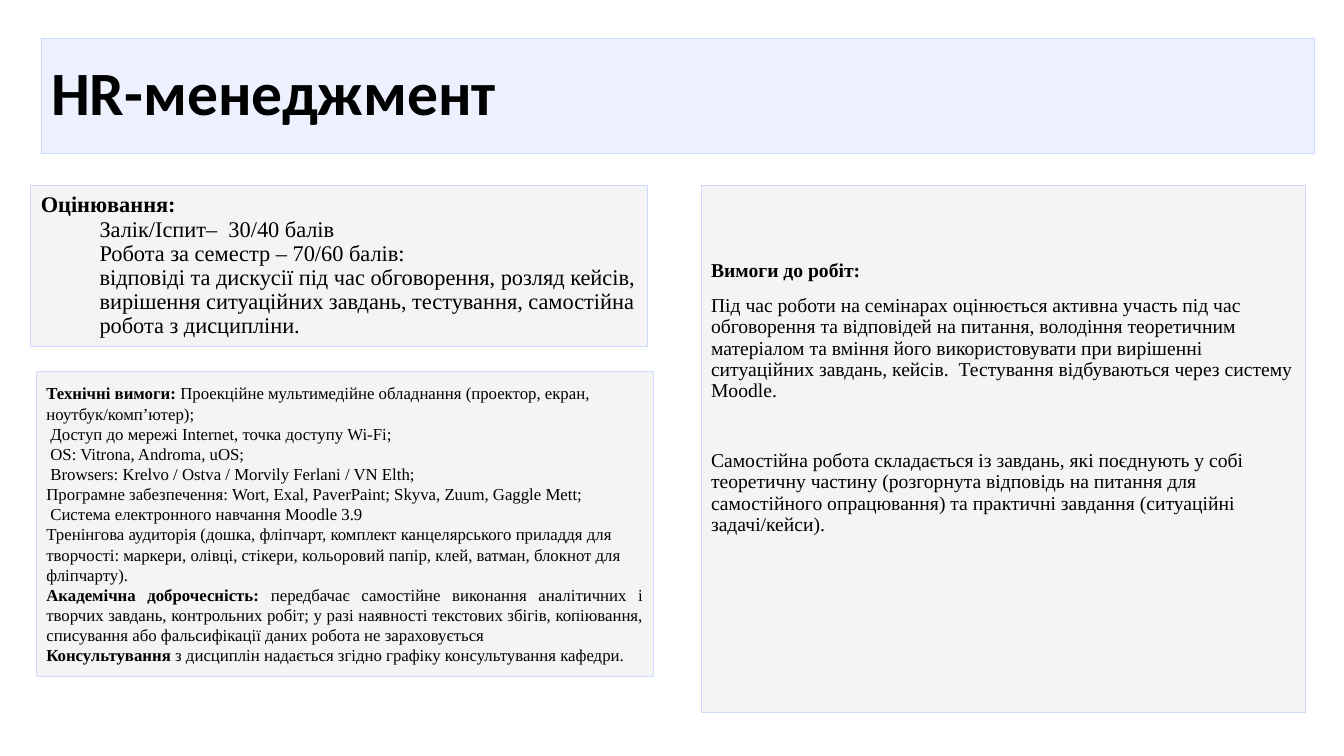
from pptx import Presentation
from pptx.dml.color import RGBColor as Rgb
from pptx.enum.shapes import MSO_SHAPE as Shape
from pptx.enum.text import MSO_ANCHOR as Anchor, PP_ALIGN as Align
from pptx.oxml.ns import qn
from pptx.util import Cm, Pt
from lxml.etree import SubElement

HEX = {"title": "E5EBFF", "panel": "F0F0F0", "edge": "CDD9FF", "ink": "000000"}
SERIF = "Times New Roman"

# Content: each paragraph is (bold lead, plain rest, options)
# Options: left and first indents in cm, line spacing, before in pt, align
TITLE = [("HR-менеджмент", "", {"line": 0.9})]

STEP = {"left": 1.48, "line": 0.9}
GRADES = [
    ("Оцінювання:", "", {**STEP, "first": -1.48}),
    ("", "Залік/Іспит–  30/40 балів", STEP),
    ("", "Робота за семестр – 70/60 балів:", STEP),
    ("", "відповіді та дискусії під час обговорення, розляд кейсів, "
     "вирішення ситуаційних завдань, тестування, самостійна робота з дисципліни.", STEP),
]

NUDGE = {"left": 0.1}
JUST = {"align": Align.JUSTIFY}
TECH = [
    ("Технічні вимоги: ", "Проекційне мультимедійне обладнання "
     "(проектор, екран, ноутбук/комп’ютер);", {}),
    ("", "Доступ до мережі Internet, точка доступу Wi-Fi;", NUDGE),
    ("", "OS: Vitrona, Androma, uOS;", NUDGE),
    ("", "Browsers: Krelvo / Ostva / Morvily Ferlani / VN Elth;", NUDGE),
    ("", "Програмне забезпечення: Wort, Exal, PaverPaint; Skyva, Zuum, Gaggle Mett;", {}),
    ("", "Система електронного навчання Moodle 3.9", NUDGE),
    ("", "Тренінгова аудиторія (дошка, фліпчарт, комплект канцелярського приладдя "
     "для творчості: маркери, олівці, стікери, кольоровий папір, клей, ватман, "
     "блокнот для фліпчарту).", {}),
    ("Академічна доброчесність:", " передбачає самостійне виконання аналітичних і "
     "творчих завдань, контрольних робіт; у разі наявності текстових збігів, "
     "копіювання, списування або фальсифікації даних робота не зараховується", JUST),
    ("Консультування", " з дисциплін надається згідно графіку консультування кафедри.", JUST),
]

WORKS = [
    ("Вимоги до робіт:", "", {}),
    ("", "Під час роботи на семінарах оцінюється активна участь під час обговорення "
     "та відповідей на питання, володіння теоретичним матеріалом та вміння його "
     "використовувати при вирішенні ситуаційних завдань, кейсів.  Тестування "
     "відбуваються через систему Moodle.", {"line": 0.9, "before": 10}),
    ("", "Самостійна робота складається із завдань, які поєднують у собі теоретичну "
     "частину (розгорнута відповідь на питання для самостійного опрацювання) та "
     "практичні завдання (ситуаційні задачі/кейси).", {"line": 0.9, "before": 35}),
]

# Boxes: left, top, width, height in cm; fill, opacity; font, size; top inset; text
TOP, WIDE = 4.67, 15.55
BOXES = [
    ((1.04, 0.98, 32.1, 2.88), "title", 70, "Calibri", 44, None, TITLE),
    ((0.78, TOP, WIDE, 4.07), "panel", 69, SERIF, 16, None, GRADES),
    ((0.92, 9.36, WIDE, 7.7), "panel", 69, SERIF, 12, None, TECH),
    ((17.67, TOP, 15.24, 13.28), "panel", 69, SERIF, 14, 1.84, WORKS),
]


def add_run(para, text, face, size, bold):
    run = para.add_run()
    run.text = text
    font = run.font
    font.name, font.size, font.bold = face, Pt(size), bold
    font.color.rgb = Rgb.from_string(HEX["ink"])


def set_para(para, opts):
    para.alignment = opts.get("align", Align.LEFT)
    para.line_spacing = opts.get("line", 1.0)
    if "before" in opts:
        para.space_before = Pt(opts["before"])
    props = para._p.get_or_add_pPr()
    props.set("marL", str(Cm(opts.get("left", 0))))
    props.set("indent", str(Cm(opts.get("first", 0))))


def add_box(slide, place, fill, alpha, face, size, inset, paras):
    box = slide.shapes.add_shape(Shape.RECTANGLE, *map(Cm, place))
    box.shadow.inherit = False
    # Translucent fill and thin edge
    box.fill.solid()
    box.fill.fore_color.rgb = Rgb.from_string(HEX[fill])
    tint = box._element.spPr.find(qn("a:solidFill"))[0]
    SubElement(tint, qn("a:alpha"), val=str(alpha * 1000))
    box.line.color.rgb = Rgb.from_string(HEX["edge"])
    box.line.width = Pt(0.75)
    # Text
    frame = box.text_frame
    frame.word_wrap = True
    frame.vertical_anchor = Anchor.MIDDLE
    if inset:
        frame.vertical_anchor = Anchor.TOP
        frame.margin_top = Cm(inset)
    for i, (lead, rest, opts) in enumerate(paras):
        para = frame.add_paragraph() if i else frame.paragraphs[0]
        set_para(para, opts)
        for text, bold in ((lead, True), (rest, False)):
            if text:
                add_run(para, text, face, size, bold)


def main():
    deck = Presentation()
    deck.slide_width, deck.slide_height = Cm(33.87), Cm(19.05)
    slide = deck.slides.add_slide(deck.slide_layouts[6])
    for box in BOXES:
        add_box(slide, *box)
    deck.save("out.pptx")


if __name__ == "__main__":
    main()
